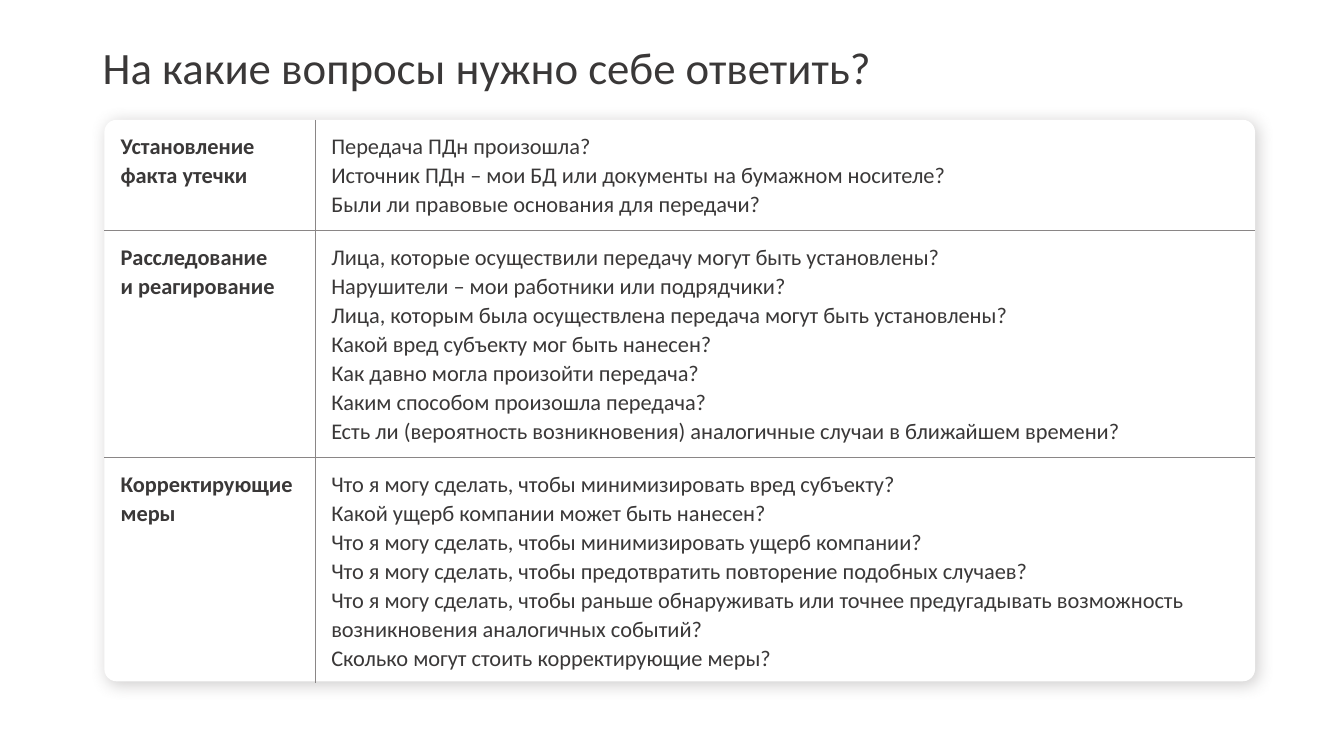
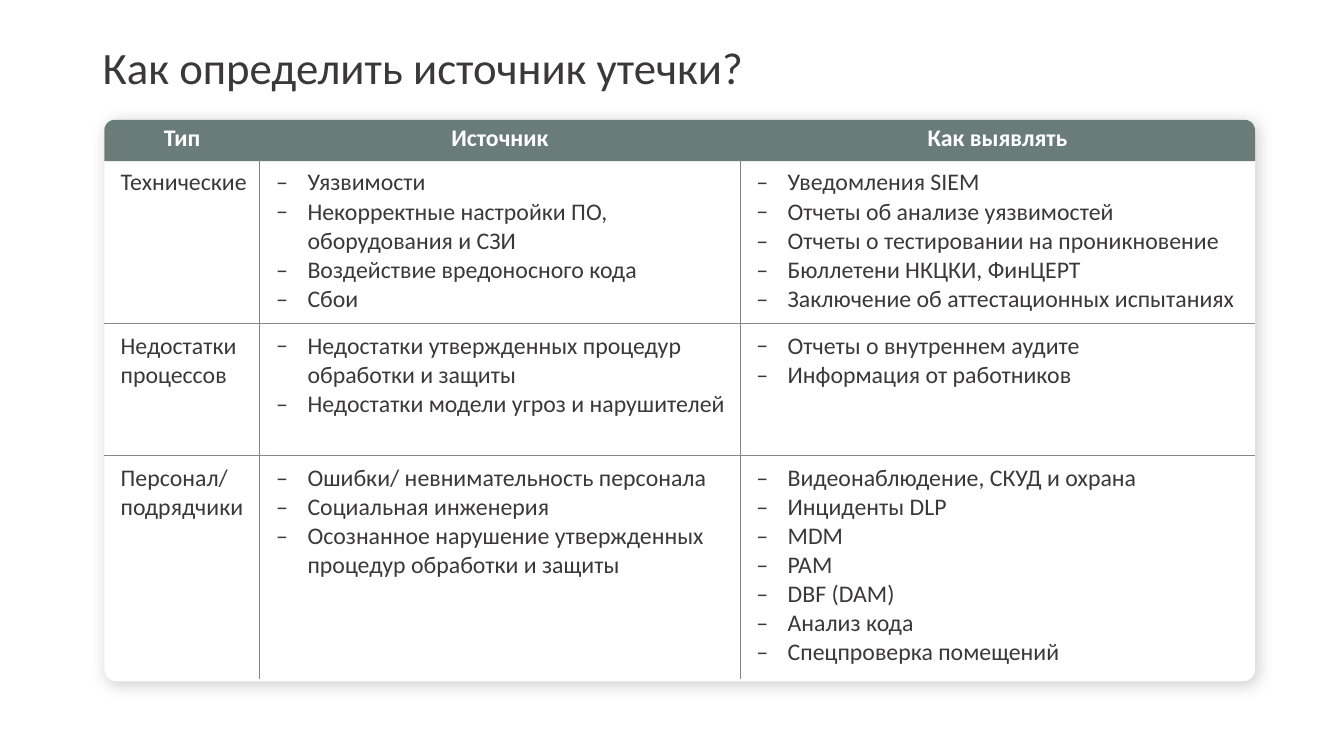
from pptx import Presentation
from pptx.dml.color import RGBColor
from pptx.enum.shapes import MSO_SHAPE
from pptx.enum.text import MSO_ANCHOR, PP_ALIGN
from pptx.oxml import parse_xml
from pptx.oxml.ns import nsdecls
from pptx.util import Cm, Pt

INK = RGBColor(0x3A, 0x38, 0x38)
GRAY = RGBColor(0x8A, 0x86, 0x86)
GREEN = RGBColor(0x6A, 0x7C, 0x78)
WHITE = RGBColor(0xFF, 0xFF, 0xFF)
FONT = "Calibri"
PLAIN = "{2D5ABB26-0587-4C30-8999-92F81FD0307C}"
LEFT, TOP, WIDTH, HEIGHT = Cm(2.63), Cm(3.02), Cm(29), Cm(14.15)
NS = nsdecls("a")

pages = [
    {
        "title": "На какие вопросы нужно себе ответить?",
        "head": False,
        "size": 16,
        "space": 1.06,
        "pad": (0.41, 0.3, 0.41, 0.3),
        "cols": (5.31, 23.69),
        "heights": (2.79, 5.72, 5.69),
        "rows": [
            ["Установление факта утечки",
             "Передача ПДн произошла?\n"
             "Источник ПДн – мои БД или документы на бумажном носителе?\n"
             "Были ли правовые основания для передачи?"],
            ["Расследование\vи реагирование",
             "Лица, которые осуществили передачу могут быть установлены?\n"
             "Нарушители – мои работники или подрядчики?\n"
             "Лица, которым была осуществлена передача могут быть установлены?\n"
             "Какой вред субъекту мог быть нанесен?\n"
             "Как давно могла произойти передача?\n"
             "Каким способом произошла передача?\n"
             "Есть ли (вероятность возникновения) аналогичные случаи в ближайшем времени?"],
            ["Корректирующие меры",
             "Что я могу сделать, чтобы минимизировать вред субъекту?\n"
             "Какой ущерб компании может быть нанесен?\n"
             "Что я могу сделать, чтобы минимизировать ущерб компании?\n"
             "Что я могу сделать, чтобы предотвратить повторение подобных случаев?\n"
             "Что я могу сделать, чтобы раньше обнаруживать или точнее предугадывать "
             "возможность возникновения аналогичных событий?\n"
             "Сколько могут стоить корректирующие меры?"],
        ],
    },
    {
        "title": "Как определить источник утечки?",
        "head": True,
        "size": 17,
        "space": 1.0,
        "pad": (0.41, 0.2, 0.2, 0.2),
        "cols": (3.92, 12.1, 12.98),
        "heights": (1.02, 4.11, 3.33, 5.64),
        "rows": [
            ["Тип", "Источник", "Как выявлять"],
            ["Технические",
             "Уязвимости\n"
             "Некорректные настройки ПО, оборудования и СЗИ\n"
             "Воздействие вредоносного кода\n"
             "Сбои",
             "Уведомления SIEM\n"
             "Отчеты об анализе уязвимостей\n"
             "Отчеты о тестировании на проникновение\n"
             "Бюллетени НКЦКИ, ФинЦЕРТ\n"
             "Заключение об аттестационных испытаниях"],
            ["Недостатки процессов",
             "Недостатки утвержденных процедур обработки и защиты\n"
             "Недостатки модели угроз и нарушителей",
             "Отчеты о внутреннем аудите\n"
             "Информация от работников"],
            ["Персонал/ подрядчики",
             "Ошибки/ невнимательность персонала\n"
             "Социальная инженерия\n"
             "Осознанное нарушение утвержденных процедур обработки и защиты",
             "Видеонаблюдение, СКУД и охрана\n"
             "Инциденты DLP\n"
             "MDM\n"
             "PAM\n"
             "DBF (DAM)\n"
             "Анализ кода\n"
             "Спецпроверка помещений"],
        ],
    },
]


def panel(slide, kind, height, color, bends):
    shape = slide.shapes.add_shape(kind, LEFT, TOP, WIDTH, height)
    for i, bend in enumerate(bends):
        shape.adjustments[i] = bend
    shape.fill.solid()
    shape.fill.fore_color.rgb = color
    shape.line.fill.background()
    shape.shadow.inherit = False
    return shape


def style(para, size, color, bold=False):
    font = para.font
    font.name, font.size, font.bold = FONT, Pt(size), bold
    font.color.rgb = color


deck = Presentation()
deck.slide_width, deck.slide_height = Cm(33.87), Cm(19.05)

for page in pages:
    slide = deck.slides.add_slide(deck.slide_layouts[6])

    card = panel(slide, MSO_SHAPE.ROUNDED_RECTANGLE, HEIGHT, WHITE, [0.022])
    glow = card._element.spPr.find("{*}effectLst")
    glow.append(parse_xml(
        f'<a:outerShdw {NS} blurRad="{Pt(12)}" dist="{Pt(3)}" dir="2700000" '
        f'algn="tl" rotWithShape="0"><a:srgbClr val="{GRAY}">'
        '<a:alpha val="40000"/></a:srgbClr></a:outerShdw>'))
    if page["head"]:
        panel(slide, MSO_SHAPE.ROUND_2_SAME_RECTANGLE, Cm(1.04), GREEN, [0.253, 0])

    box = slide.shapes.add_textbox(Cm(2.34), Cm(1.02), Cm(29.21), Cm(1.5))
    frame = box.text_frame
    frame.word_wrap = True
    frame.vertical_anchor = MSO_ANCHOR.MIDDLE
    frame.text = page["title"]
    frame.paragraphs[0].line_spacing = 0.9
    style(frame.paragraphs[0], 32, INK)

    rows, cols = page["rows"], page["cols"]
    holder = slide.shapes.add_table(
        len(rows), len(cols), LEFT, TOP, WIDTH, Cm(sum(page["heights"])))
    table = holder.table
    table.first_row = page["head"]
    table.horz_banding = False
    table._tbl.tblPr.find("{*}tableStyleId").text = PLAIN
    for col, width in zip(table.columns, cols):
        col.width = Cm(width)
    for row, height in zip(table.rows, page["heights"]):
        row.height = Cm(height)

    for r, texts in enumerate(rows):
        for c, text in enumerate(texts):
            head = page["head"] and r == 0
            cell = table.cell(r, c)
            pad = (0.3, 0.1, 0.3, 0.1) if head else page["pad"]
            (cell.margin_left, cell.margin_top,
             cell.margin_right, cell.margin_bottom) = map(Cm, pad)

            edges = {
                "L": not head and c > 0,
                "R": not head and c < len(cols) - 1,
                "T": r > page["head"],
                "B": not head and r < len(rows) - 1,
            }
            props = cell._tc.get_or_add_tcPr()
            for side, shown in edges.items():
                paint = (f'<a:solidFill><a:srgbClr val="{GRAY}"/></a:solidFill>'
                         if shown else "<a:noFill/>")
                props.append(parse_xml(
                    f'<a:ln{side} {NS} w="{Pt(0.75)}">{paint}</a:ln{side}>'))
            cell.fill.background()

            cell.text_frame.text = text
            for para in cell.text_frame.paragraphs:
                para.line_spacing = page["space"]
                if head:
                    para.alignment = PP_ALIGN.CENTER
                elif page["head"] and c > 0:
                    dash = para._p.get_or_add_pPr()
                    dash.set("marL", str(Cm(0.79)))
                    dash.set("indent", str(-Cm(0.79)))
                    dash.append(parse_xml(f'<a:buFont {NS} typeface="{FONT}"/>'))
                    dash.append(parse_xml(f'<a:buChar {NS} char="–"/>'))
                bold = head or (not page["head"] and c == 0)
                style(para, page["size"], WHITE if head else INK, bold)

deck.save("out.pptx")
